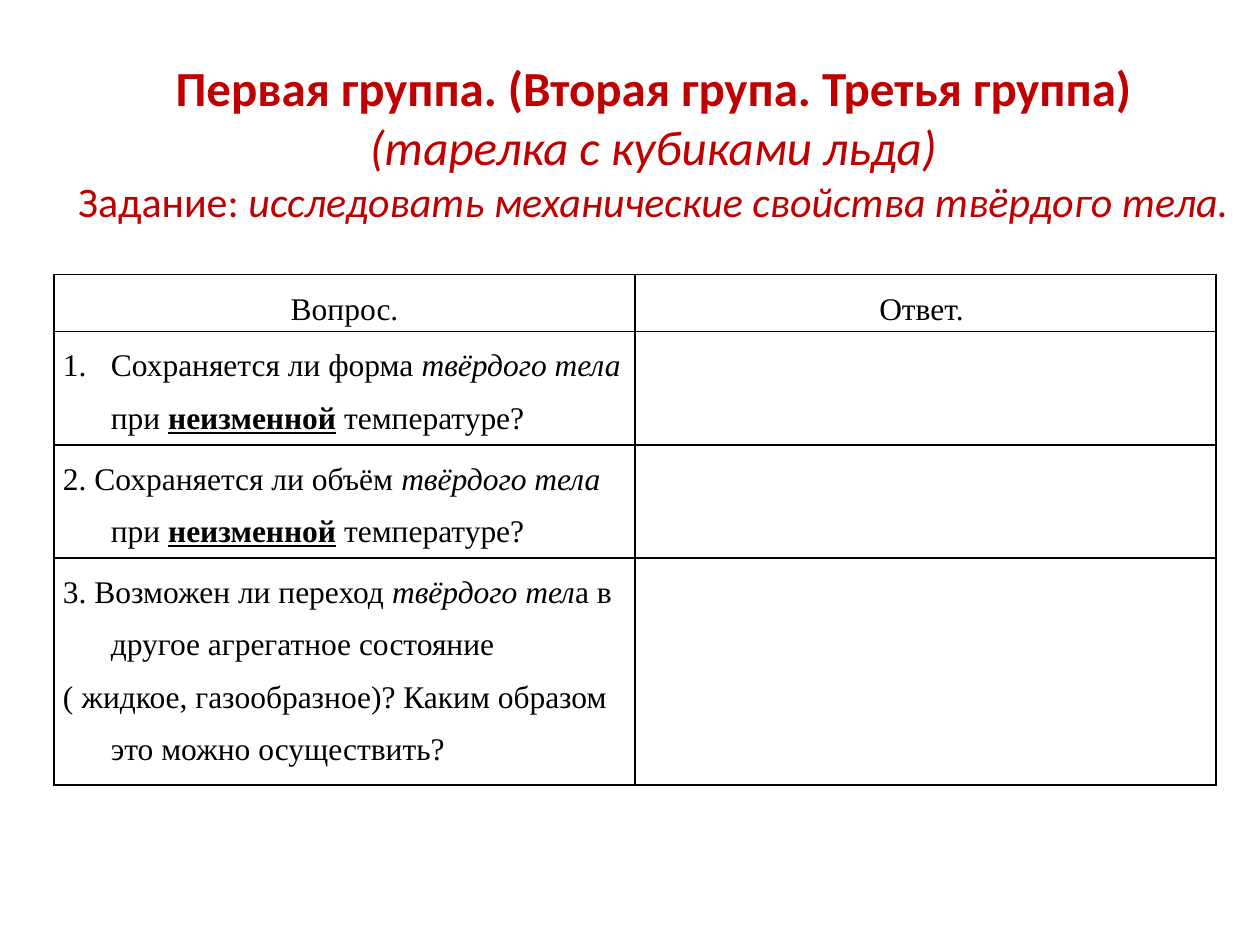
from lxml.etree import SubElement
from pptx import Presentation
from pptx.dml.color import RGBColor as RGB
from pptx.enum.text import MSO_ANCHOR as Anchor, MSO_AUTO_SIZE as Fit, PP_ALIGN as Align
from pptx.oxml.ns import qn
from pptx.util import Inches, Pt

THEME = {
    "title": {"name": "Calibri", "color": "C00000", "size": 28, "small": 24},
    "table": {"name": "Times New Roman", "color": "000000", "size": 18},
    "border": {"color": "000000", "width": 1},
}
W, H = 10, 7.5
BOLD, ITALIC = {"bold": True}, {"italic": True}
KEY = {"bold": True, "underline": True}

TITLE = [
    ("size", [("Первая группа. (Вторая група. Третья группа)", BOLD)]),
    ("size", [("(тарелка с кубиками льда)", ITALIC)]),
    ("small", [("Задание: ", {}),
               ("исследовать механические свойства твёрдого тела.", ITALIC)]),
]
CONDITION = [("при ", {}), ("неизменной", KEY), (" температуре?", {})]
HEADERS = ["Вопрос.", "Ответ. "]
QUESTIONS = [
    [[("Сохраняется ли форма ", {}), ("твёрдого тела ", ITALIC), *CONDITION]],
    [[("2. Сохраняется ли объём ", {}), ("твёрдого тела ", ITALIC), *CONDITION]],
    [[("3. Возможен ли переход ", {}), ("твёрдого тел", ITALIC),
      ("а в другое агрегатное состояние", {})],
     [("( жидкое, газообразное)? Каким образом это можно осуществить?", {})]],
]
NUMBERED_ROW = 1
LINES = [1, 2, 2, 4]
LINE_H, COL_W, INDENT = 0.45, 4.61, 0.38


def assign(obj, values):
    for key, value in values.items():
        setattr(obj, key, value)


def add_runs(p, runs, style, size="size"):
    for text, marks in runs:
        r = p.add_run()
        r.text = text
        assign(r.font, {"name": style["name"], "size": Pt(style[size]), **marks})
        r.font.color.rgb = RGB.from_string(style["color"])


def paragraphs(tf, count):
    return [tf.paragraphs[0]] + [tf.add_paragraph() for _ in range(count - 1)]


def format_cell(cell):
    assign(cell, {"margin_left": Inches(0.07), "margin_right": Inches(0.07),
                  "margin_top": 0, "margin_bottom": 0})
    tc_pr = cell._tc.get_or_add_tcPr()
    for side in ("lnL", "lnR", "lnT", "lnB"):
        ln = SubElement(tc_pr, qn(f"a:{side}"), w=str(Pt(THEME["border"]["width"])))
        fill = SubElement(ln, qn("a:solidFill"))
        SubElement(fill, qn("a:srgbClr"), val=THEME["border"]["color"])
    cell.fill.background()


def add_table(s):
    frame = s.shapes.add_table(len(LINES), len(HEADERS), Inches(0.43), Inches(2.18),
                               Inches(COL_W * len(HEADERS)), Inches(LINE_H * sum(LINES)))
    table = frame.table
    assign(table, {"first_row": False, "horz_banding": False})
    for col in table.columns:
        col.width = Inches(COL_W)
    for row, lines in zip(table.rows, LINES):
        row.height = Inches(LINE_H * lines)
    for cell in table.iter_cells():
        format_cell(cell)
    for i, text in enumerate(HEADERS):
        p = table.cell(0, i).text_frame.paragraphs[0]
        assign(p, {"alignment": Align.CENTER, "line_spacing": 1.5})
        add_runs(p, [(text, {})], THEME["table"])
    for i, question in enumerate(QUESTIONS, 1):
        tf = table.cell(i, 0).text_frame
        for p, runs in zip(paragraphs(tf, len(question)), question):
            p_pr = p._p.get_or_add_pPr()
            p_pr.set("marL", str(Inches(INDENT)))
            p_pr.set("indent", str(-Inches(INDENT)))
            if i == NUMBERED_ROW:
                SubElement(p_pr, qn("a:buAutoNum"), type="arabicPeriod")
            p.line_spacing = 1.5
            add_runs(p, runs, THEME["table"])


def add_title(s):
    box = s.shapes.add_textbox(Inches(0.47), Inches(0.4), Inches(9.43), Inches(1.45))
    tf = box.text_frame
    assign(tf, {"word_wrap": False, "vertical_anchor": Anchor.MIDDLE,
                "auto_size": Fit.SHAPE_TO_FIT_TEXT})
    for p, (size, runs) in zip(paragraphs(tf, len(TITLE)), TITLE):
        p.alignment = Align.CENTER
        add_runs(p, runs, THEME["title"], size)


def main():
    prs = Presentation()
    assign(prs, {"slide_width": Inches(W), "slide_height": Inches(H)})
    s = prs.slides.add_slide(prs.slide_layouts[6])
    add_table(s)
    add_title(s)
    prs.save("out.pptx")


if __name__ == "__main__":
    main()
